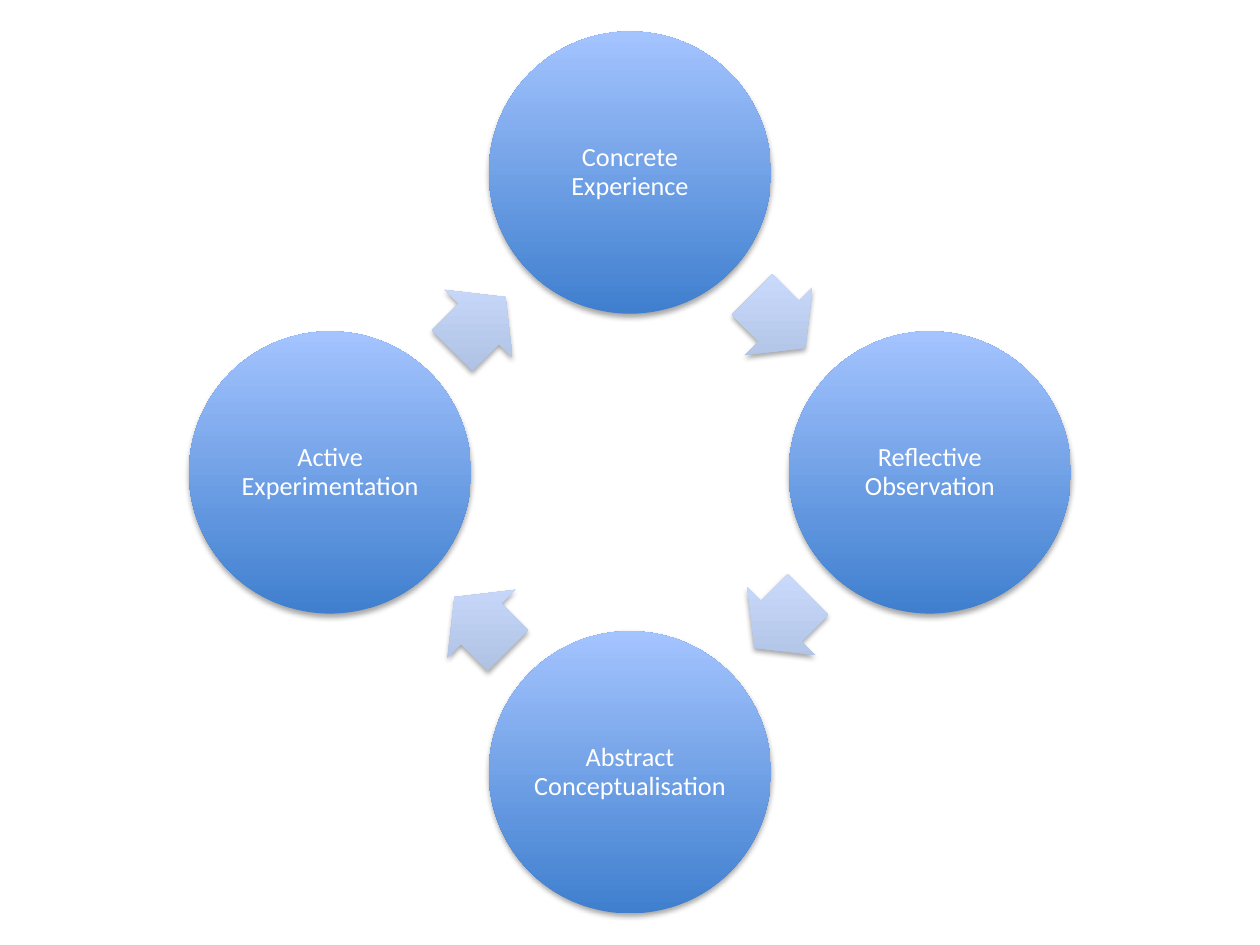
import math
from lxml import etree
from pptx import Presentation
from pptx.dml.color import RGBColor
from pptx.enum.shapes import MSO_SHAPE
from pptx.enum.text import MSO_ANCHOR, PP_ALIGN
from pptx.oxml.ns import qn
from pptx.util import Inches, Pt

CIRCLE, ARROW = MSO_SHAPE.OVAL, MSO_SHAPE.RIGHT_ARROW
MIDDLE, CENTER = MSO_ANCHOR.MIDDLE, PP_ALIGN.CENTER

# Content: the learning cycle, clockwise from the top
STAGES = [
    "Concrete Experience",
    "Reflective Observation",
    "Abstract Conceptualisation",
    "Active Experimentation",
]
COLORS = {
    "stage_low": "3F7FCE", "stage_high": "A4C4FF",
    "arrow_low": "ADBFE1", "arrow_high": "CCDDFF",
    "text": "FFFFFF", "shadow": "000000",
}
FONT = "Calibri"

# Layout in inches
WIDTH, HEIGHT = 10, 7.5
RADIUS = 2.38                      # from slide centre to stage centre
DIAMETER = 2.24
LABEL = DIAMETER / math.sqrt(2)    # square inside the circle
ARROW_SIZE = (0.6, 0.76)
ARROW_BACKSET = 0.01               # arrows sit slightly towards their start


def centered(cx, cy, width, height):
    return [Inches(v) for v in (cx - width / 2, cy - height / 2, width, height)]


def add_shadow(shape):
    shape.shadow.inherit = False
    effects = shape._element.spPr.find(qn("a:effectLst"))
    outer = etree.SubElement(effects, qn("a:outerShdw"), blurRad=str(Pt(3.1)),
                             dist=str(Pt(1.8)), dir="5400000", rotWithShape="0")
    color = etree.SubElement(outer, qn("a:srgbClr"), val=COLORS["shadow"])
    etree.SubElement(color, qn("a:alpha"), val="35000")


def add_gradient_shape(slide, kind, box, low, high, rotation=0):
    shape = slide.shapes.add_shape(kind, *box)
    shape.rotation = rotation
    shape.line.fill.background()
    shape.fill.gradient()
    shape.fill.gradient_angle = 90
    for stop, name in zip(shape.fill.gradient_stops, (low, high)):
        stop.color.rgb = RGBColor.from_string(COLORS[name])
    # Keep the light side on top however the shape is turned
    shape._element.spPr.find(qn("a:gradFill")).set("rotWithShape", "0")
    add_shadow(shape)
    return shape


def add_text(slide, text, box, *, size=15, color="text", inset=0.02):
    frame = slide.shapes.add_textbox(*box).text_frame
    frame.word_wrap = True
    frame.vertical_anchor = MIDDLE
    frame.margin_left = frame.margin_right = Inches(inset)
    frame.margin_top = frame.margin_bottom = Inches(inset)
    paragraph = frame.paragraphs[0]
    paragraph.alignment = CENTER
    paragraph.line_spacing = 0.9
    paragraph.space_after = Pt(0.35 * size)
    run = paragraph.add_run()
    run.text = text
    run.font.size = Pt(size)
    run.font.name = FONT
    run.font.color.rgb = RGBColor.from_string(COLORS[color])


def main():
    prs = Presentation()
    prs.slide_width, prs.slide_height = Inches(WIDTH), Inches(HEIGHT)
    slide = prs.slides.add_slide(prs.slide_layouts[6])

    turns = [math.radians(360 * i / len(STAGES)) for i in range(len(STAGES))]
    centers = [(WIDTH / 2 + RADIUS * math.sin(t), HEIGHT / 2 - RADIUS * math.cos(t))
               for t in turns]

    for i, stage in enumerate(STAGES):
        # Stage circle and its label
        x, y = centers[i]
        add_gradient_shape(slide, CIRCLE, centered(x, y, DIAMETER, DIAMETER),
                           "stage_low", "stage_high")
        add_text(slide, stage, centered(x, y, LABEL, LABEL))

        # Arrow halfway to the next stage
        next_x, next_y = centers[(i + 1) % len(STAGES)]
        dx, dy = next_x - x, next_y - y
        mid_x = (x + next_x) / 2 - math.copysign(ARROW_BACKSET, dx)
        mid_y = (y + next_y) / 2 - math.copysign(ARROW_BACKSET, dy)
        arrow = add_gradient_shape(slide, ARROW, centered(mid_x, mid_y, *ARROW_SIZE),
                                   "arrow_low", "arrow_high",
                                   rotation=math.degrees(math.atan2(dy, dx)) % 360)
        arrow.adjustments[0] = 0.6
        arrow.adjustments[1] = 0.5

    prs.save("out.pptx")


if __name__ == "__main__":
    main()
